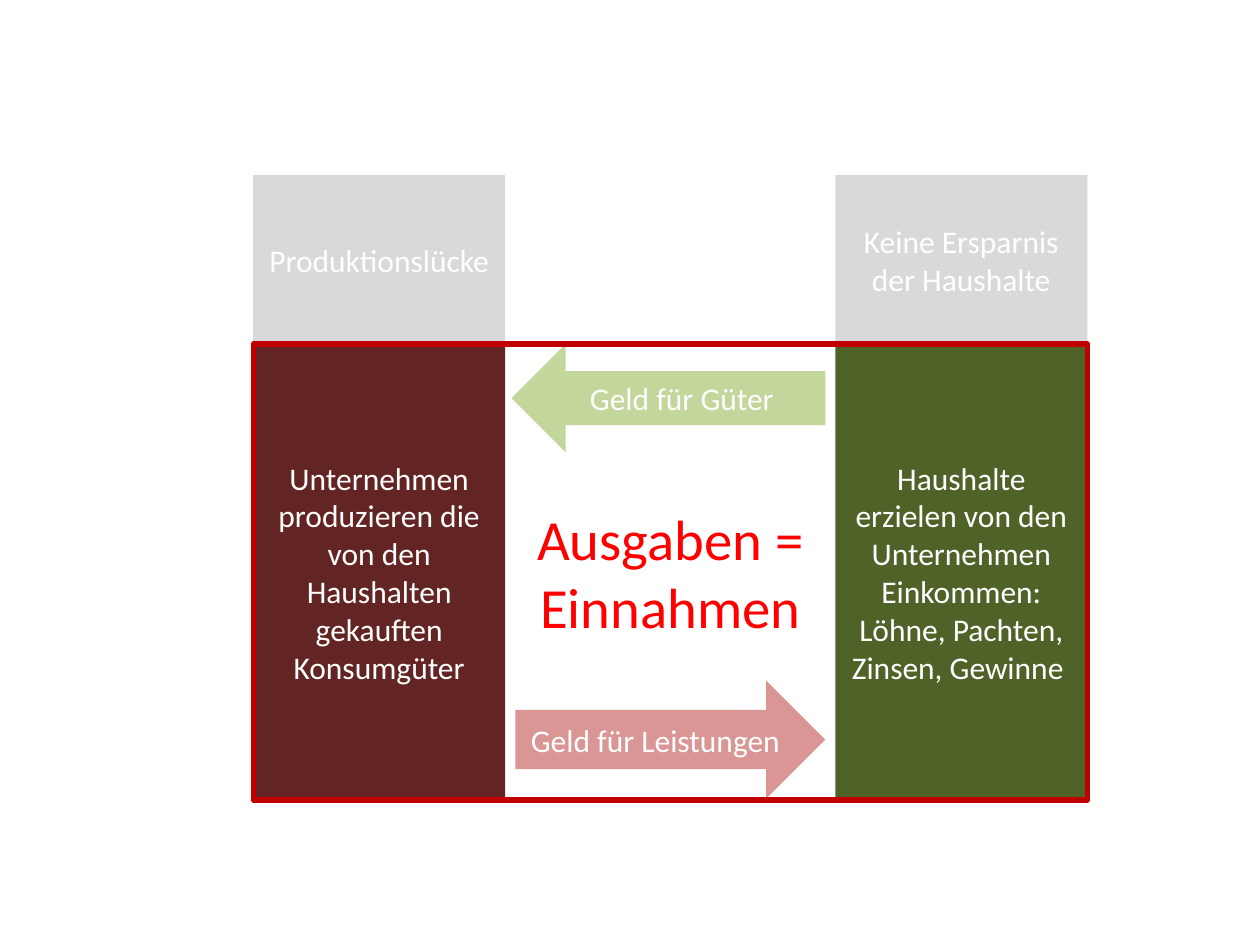
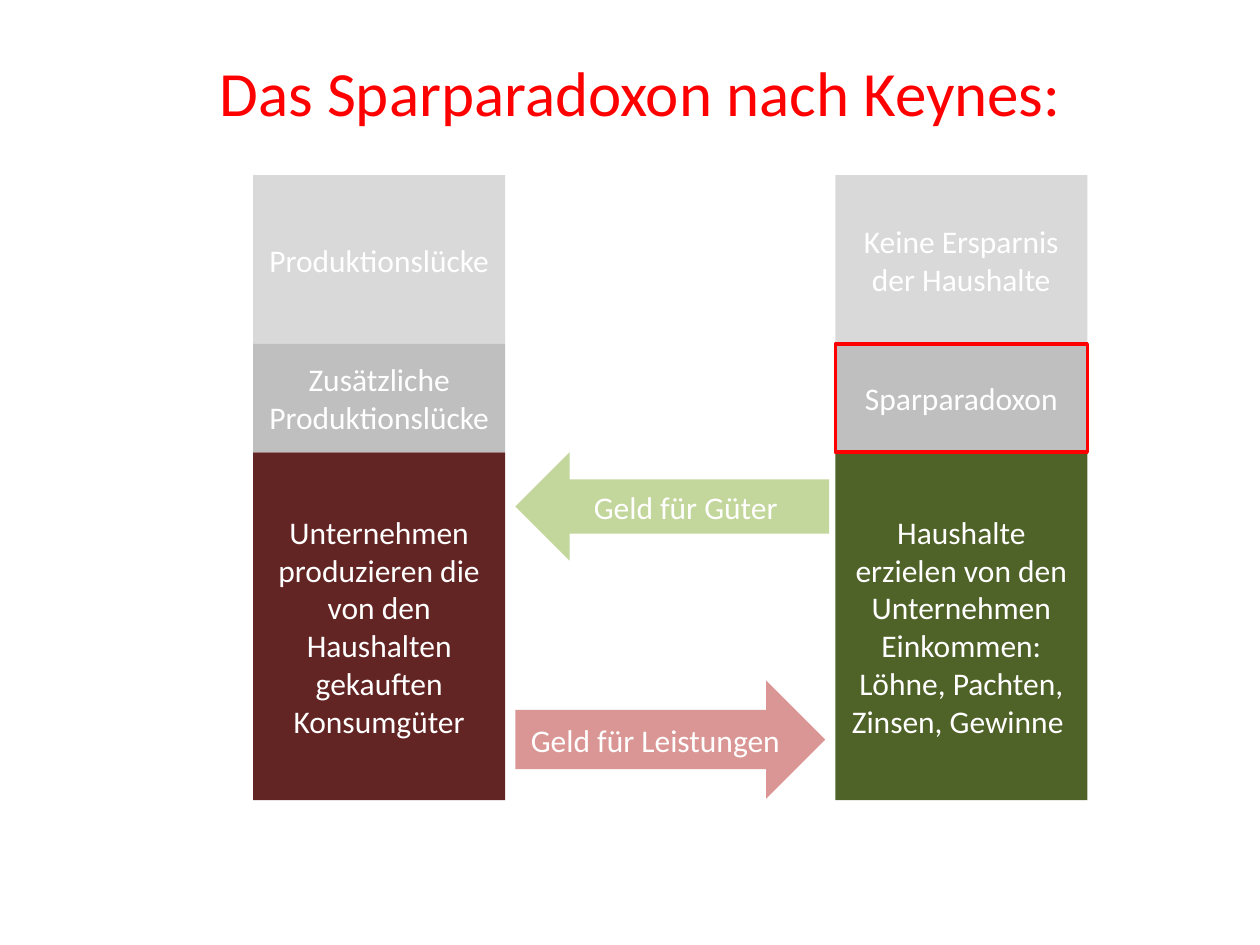
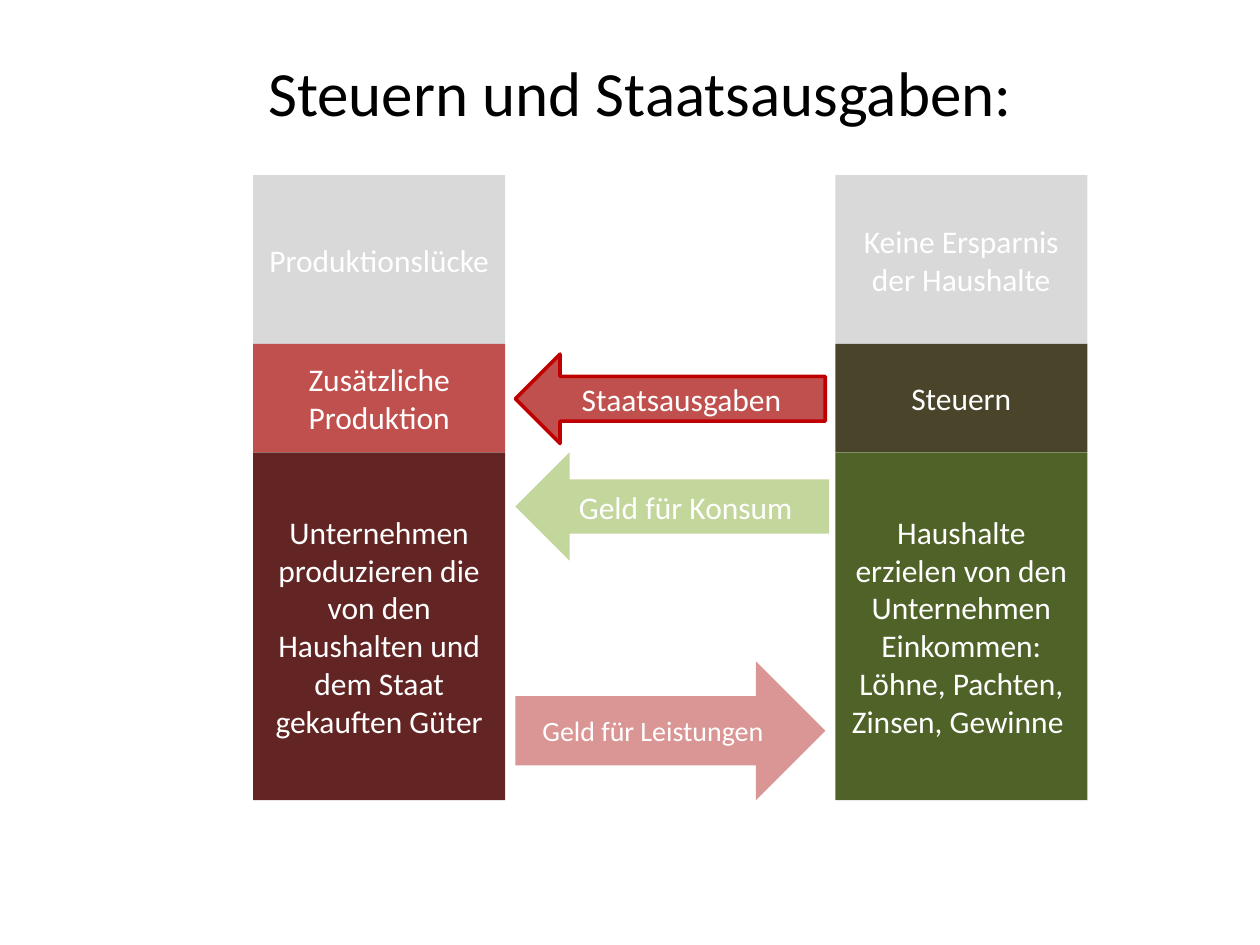
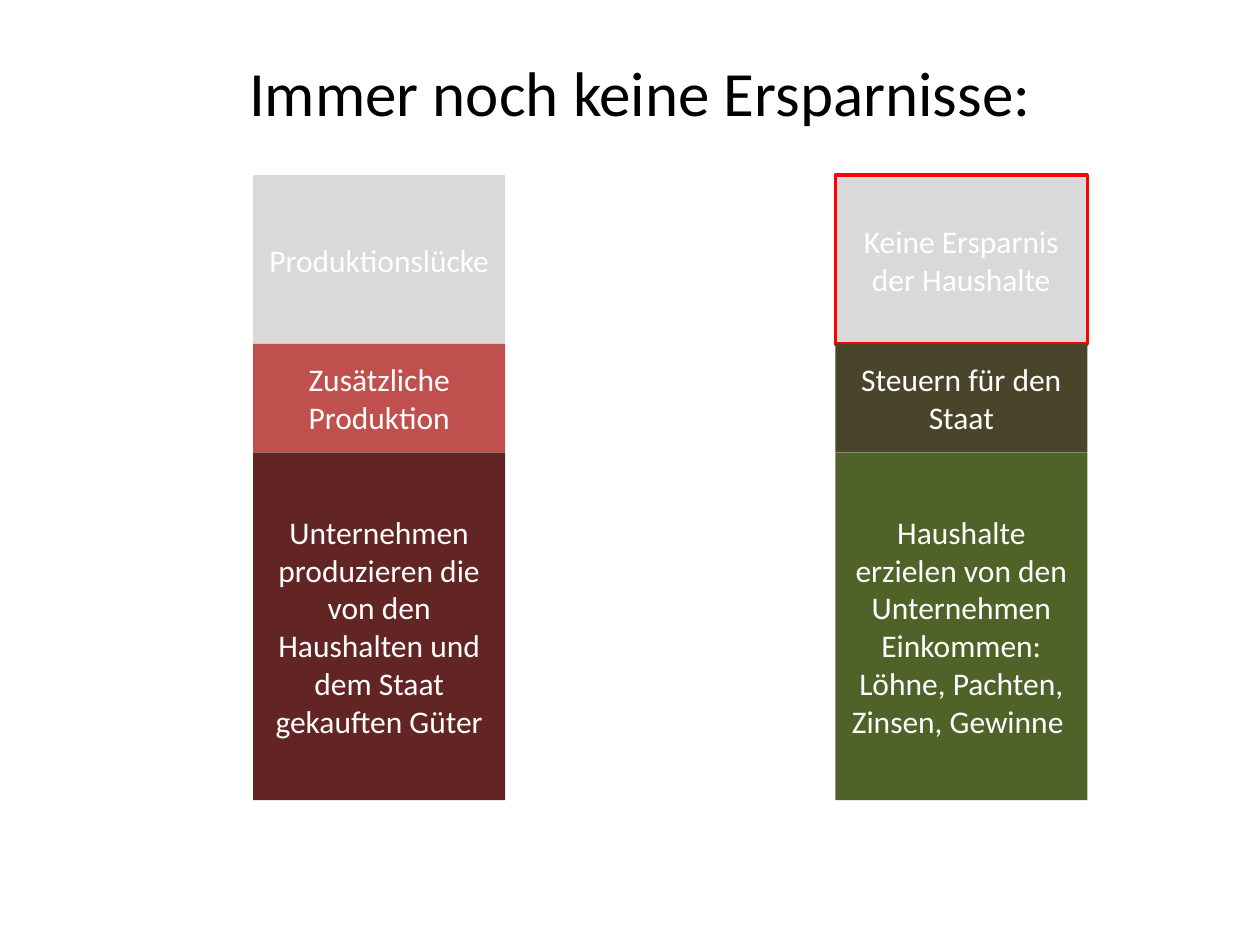
from pptx import Presentation
from pptx import util as u
from pptx.dml import color
from pptx.enum import shapes, text

COLORS = {
    "white": "FFFFFF", "black": "000000", "red": "FF0000", "frame": "C00000",
    "households": "4F6228", "companies": "632523", "gap": "D9D9D9",
    "extra_gap": "BFBFBF", "goods": "C3D69B", "services": "D99694",
    "taxes": "4A452A", "state": "C0504D",
}
FONT = "Calibri"
LEFT, MIDDLE, RIGHT = 2.01, 4.09, 6.63
TOP, UPPER, LOWER, BOTTOM = 1.39, 2.73, 3.59, 6.35
COLUMN_WIDTH = 2
ARROW_WIDTH = 2.46
GOODS_WIDTH = 2.49
BAND = LOWER - UPPER
RECTANGLE = shapes.MSO_SHAPE.RECTANGLE
LEFT_ARROW = shapes.MSO_SHAPE.LEFT_ARROW
RIGHT_ARROW = shapes.MSO_SHAPE.RIGHT_ARROW

HOUSEHOLDS = ("Haushalte erzielen von den Unternehmen Einkommen: "
              "Löhne, Pachten, Zinsen, Gewinne ")
CONSUMER_GOODS = "Unternehmen produzieren die von den Haushalten gekauften Konsumgüter"
ALL_GOODS = "Unternehmen produzieren die von den Haushalten und dem Staat gekauften Güter"
TITLE_BOX = (0.83, 0.3, 8.5, 0.85)


def write(shape, words, size, tint):
    frame = shape.text_frame
    frame.text = words
    frame.word_wrap = True
    frame.auto_size = text.MSO_AUTO_SIZE.NONE
    frame.vertical_anchor = text.MSO_ANCHOR.MIDDLE
    paragraph = frame.paragraphs[0]
    paragraph.alignment = text.PP_ALIGN.CENTER
    for run in paragraph.runs:
        run.font.name = FONT
        run.font.size = u.Pt(size)
        run.font.color.rgb = color.RGBColor.from_string(COLORS[tint])


def add_block(slide, kind, box, fill=None, words="", size=18, line=None, weight=2):
    shape = slide.shapes.add_shape(kind, *[u.Inches(length) for length in box])
    shape.shadow.inherit = False
    if fill:
        shape.fill.solid()
        shape.fill.fore_color.rgb = color.RGBColor.from_string(COLORS[fill])
    else:
        shape.fill.background()
    if line:
        shape.line.color.rgb = color.RGBColor.from_string(COLORS[line])
        shape.line.width = u.Pt(weight)
    else:
        shape.line.fill.background()
    if words:
        write(shape, words, size, "white")


presentation = Presentation()
presentation.slide_width = u.Inches(10)
presentation.slide_height = u.Inches(7.5)

slides = [
    {
        "title": ("Ausgaben = Einnahmen", (3.98, 3.99, 2.68, 1.1), 32.4, "red"),
        "base": UPPER, "companies": CONSUMER_GOODS,
        "arrows": [
            (LEFT_ARROW, (4.06, UPPER, GOODS_WIDTH, BAND), "goods", "Geld für Güter"),
            (RIGHT_ARROW, (MIDDLE, 5.4, ARROW_WIDTH, 0.94), "services", "Geld für Leistungen"),
        ],
    },
    {
        "title": ("Das Sparparadoxon nach Keynes:", TITLE_BOX, 36, "red"),
        "base": LOWER, "companies": CONSUMER_GOODS,
        "arrows": [
            (LEFT_ARROW, (MIDDLE, LOWER, GOODS_WIDTH, BAND), "goods", "Geld für Güter"),
            (RIGHT_ARROW, (MIDDLE, 5.4, ARROW_WIDTH, 0.94), "services", "Geld für Leistungen"),
        ],
        "band": [(LEFT, "extra_gap", "Zusätzliche Produktionslücke", None),
                 (RIGHT, "extra_gap", "Sparparadoxon", "red")],
    },
    {
        "title": ("Steuern und Staatsausgaben:", TITLE_BOX, 36, "black"),
        "base": LOWER, "companies": ALL_GOODS,
        "arrows": [
            (LEFT_ARROW, (MIDDLE, LOWER, GOODS_WIDTH, BAND), "goods", "Geld für Konsum"),
            (RIGHT_ARROW, (MIDDLE, 5.25, ARROW_WIDTH, 1.1), "services", "Geld für Leistungen", 16),
            (LEFT_ARROW, (MIDDLE, 2.81, ARROW_WIDTH, 0.71), "state", "Staatsausgaben", 18, "frame"),
        ],
        "band": [(LEFT, "state", "Zusätzliche Produktion", None),
                 (RIGHT, "taxes", "Steuern", None)],
    },
    {
        "title": ("Immer noch keine Ersparnisse:", TITLE_BOX, 36, "black"),
        "base": LOWER, "companies": ALL_GOODS, "savings_line": "red",
        "band": [(LEFT, "state", "Zusätzliche Produktion", None),
                 (RIGHT, "taxes", "Steuern für den Staat", None)],
    },
]

for content in slides:
    slide = presentation.slides.add_slide(presentation.slide_layouts[5])
    words, box, size, tint = content["title"]
    title = slide.shapes.title
    title.left, title.top, title.width, title.height = [u.Inches(length) for length in box]
    write(title, words, size, tint)

    base = content["base"]
    for left, fill, words in ((RIGHT, "households", HOUSEHOLDS),
                              (LEFT, "companies", content["companies"])):
        add_block(slide, RECTANGLE, (left, base, COLUMN_WIDTH, BOTTOM - base), fill, words)
    for left, words, line in ((LEFT, "Produktionslücke", None),
                              (RIGHT, "Keine Ersparnis der Haushalte", content.get("savings_line"))):
        add_block(slide, RECTANGLE, (left, TOP, COLUMN_WIDTH, UPPER - TOP), "gap", words, line=line)
    for left, fill, words, line in content.get("band", []):
        add_block(slide, RECTANGLE, (left, UPPER, COLUMN_WIDTH, BAND), fill, words, line=line)
    for arrow in content.get("arrows", []):
        add_block(slide, *arrow)
    if base == UPPER:
        add_block(slide, RECTANGLE, (LEFT, UPPER, RIGHT + COLUMN_WIDTH - LEFT, BOTTOM - UPPER),
                  line="frame", weight=3)

presentation.save("out.pptx")
